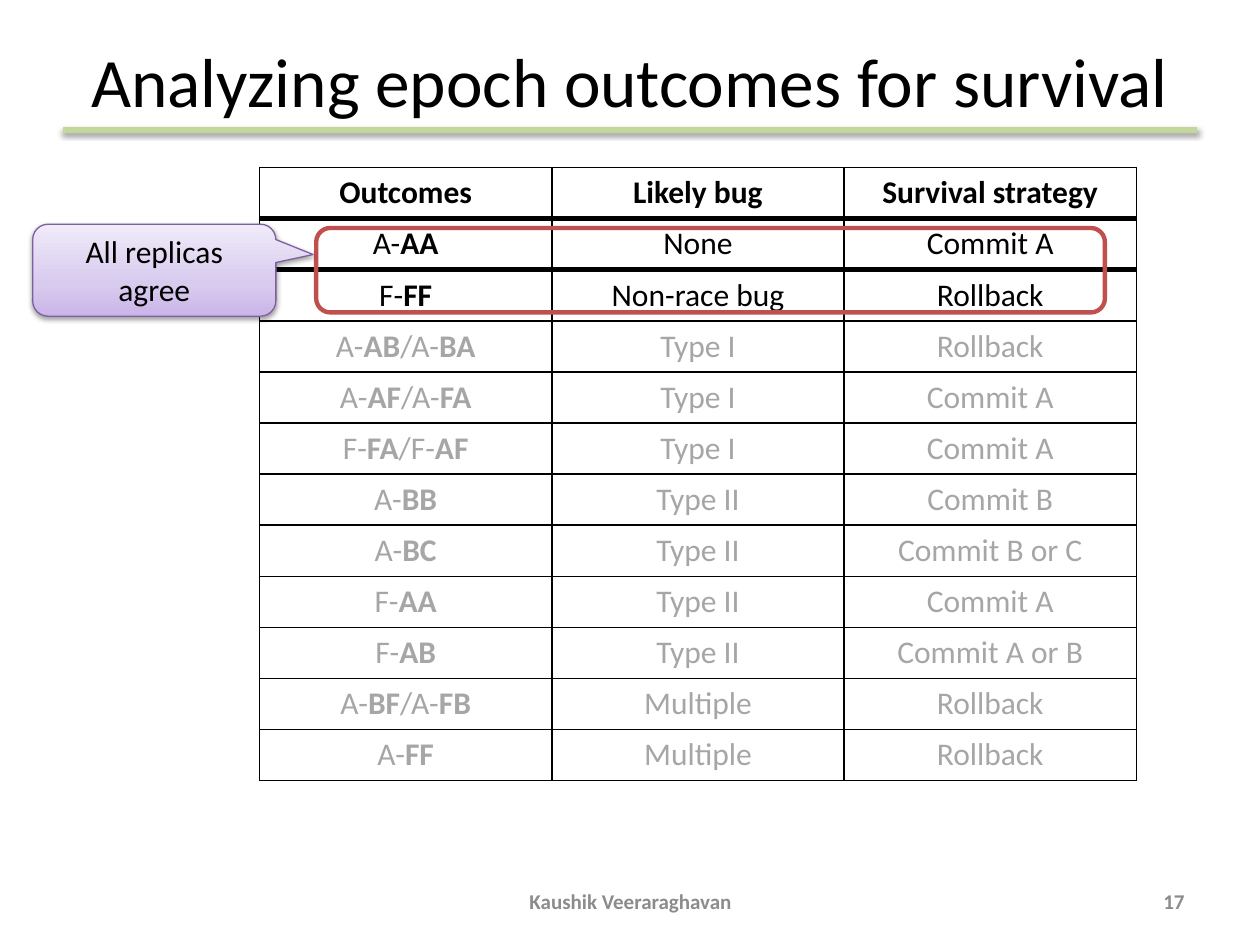
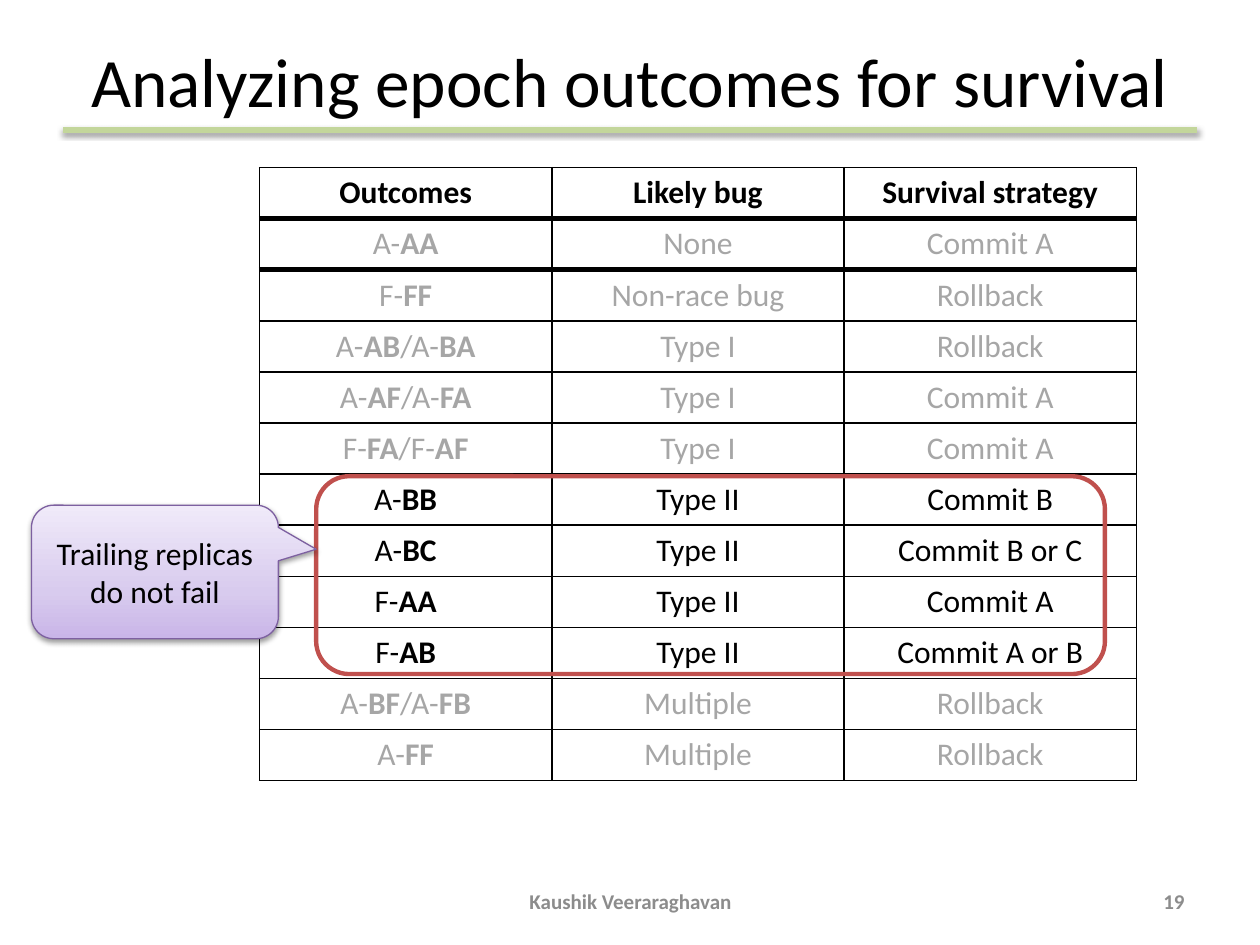
from lxml import etree
from pptx import Presentation
from pptx.dml.color import RGBColor
from pptx.enum.shapes import MSO_CONNECTOR as Link, MSO_SHAPE as Kind
from pptx.enum.text import MSO_ANCHOR as Anchor, PP_ALIGN as Align
from pptx.oxml.ns import qn
from pptx.util import Inches, Pt

FONT = "Calibri"
BLACK, GRAY, FAINT = "000000", "8C8C8C", "A6A6A6"
GREEN, RED, PURPLE = "C3D69B", "C0504D", "7D60A0"
LILAC = [(0, "C9B5E8"), (35, "D8CBEE"), (100, "F0EAF9")]
TITLE = "Analyzing epoch outcomes for survival"
AUTHOR = "Kaushik Veeraraghavan"
HEADS = ["Outcomes", "Likely bug", "Survival strategy"]
ROWS = [
    ("A-AA", "None", "Commit A"),
    ("F-FF", "Non-race bug", "Rollback"),
    ("A-AB/A-BA", "Type I", "Rollback"),
    ("A-AF/A-FA", "Type I", "Commit A"),
    ("F-FA/F-AF", "Type I", "Commit A"),
    ("A-BB", "Type II", "Commit B"),
    ("A-BC", "Type II", "Commit B or C"),
    ("F-AA", "Type II", "Commit A"),
    ("F-AB", "Type II", "Commit A or B"),
    ("A-BF/A-FB", "Multiple", "Rollback"),
    ("A-FF", "Multiple", "Rollback"),
]
THICK_EDGES = (1, 2)


def color(code):
    return RGBColor.from_string(code)


def box(*sizes):
    return [Inches(size) for size in sizes]


def node(parent, tag, **attrs):
    """Append an XML child with the given attributes."""
    child = etree.SubElement(parent, qn(tag))
    for key, val in attrs.items():
        child.set(key, str(val))
    return child


def tint(parent, code):
    return node(parent, "a:srgbClr", val=code)


def shade(shape):
    """Give a shape or connector a soft shadow below it."""
    props = shape._element.spPr
    glow = props.find(qn("a:effectLst"))
    if glow is None:
        glow = node(props, "a:effectLst")
    drop = node(glow, "a:outerShdw", blurRad=Pt(3.1), dist=Pt(1.6),
                dir=90 * 60000, rotWithShape=0)
    node(tint(drop, BLACK), "a:alpha", val=38000)


def split(code):
    """Yield (text, bold) runs; replica letters after a dash are bold."""
    for num, part in enumerate(code.split("/")):
        yield ("/" if num else "") + part[:2], False
        yield part[2:], True


class Deck:
    def __init__(self):
        self.prs = Presentation()
        self.prs.slide_width, self.prs.slide_height = box(10, 7.5)

    def start(self, number):
        """Add a slide with its title, rule and footer."""
        self.slide = self.prs.slides.add_slide(self.prs.slide_layouts[5])
        self.shapes = self.slide.shapes
        self.title()
        self.rule()
        self.label(AUTHOR, box(3.42, 6.95, 3.17, 0.4), Align.CENTER)
        self.label(str(number), box(7.17, 6.95, 2.33, 0.4), Align.RIGHT)

    def text(self, frame, runs, size, code=BLACK, align=Align.CENTER):
        para = frame.paragraphs[0]
        para.alignment = align
        font = para.font
        font.name, font.size, font.color.rgb = FONT, Pt(size), color(code)
        for words, bold in runs:
            run = para.add_run()
            run.text, run.font.bold = words, bold

    def title(self):
        shape = self.shapes.title
        shape.left, shape.top, shape.width, shape.height = box(0.5, 0.3, 9, 0.66)
        shape.text_frame.vertical_anchor = Anchor.MIDDLE
        self.text(shape.text_frame, [(TITLE, False)], 39.6)

    def rule(self):
        line = self.shapes.add_connector(Link.STRAIGHT, *box(0.5, 1.03, 9.5, 1.03))
        line.line.color.rgb, line.line.width = color(GREEN), Pt(3.5)
        shade(line)

    def label(self, words, place, align):
        frame = self.shapes.add_textbox(*place).text_frame
        frame.word_wrap, frame.vertical_anchor = True, Anchor.MIDDLE
        self.text(frame, [(words, True)], 12, GRAY, align)

    def shape(self, kind, place, code, width):
        shape = self.shapes.add_shape(kind, *place)
        shape.shadow.inherit = False
        shape.fill.background()
        shape.line.color.rgb, shape.line.width = color(code), Pt(width)
        return shape

    def frame(self, place):
        self.shape(Kind.ROUNDED_RECTANGLE, place, RED, 2.5)

    def callout(self, words, place):
        shape = self.shape(Kind.ROUNDED_RECTANGULAR_CALLOUT, place, PURPLE, 0.75)
        for num, val in enumerate((0.653, -0.17, 0.167)):
            shape.adjustments[num] = val
        shape.fill.gradient()
        shape.fill.gradient_angle = 90
        stops = shape._element.spPr.find(qn("a:gradFill")).find(qn("a:gsLst"))
        for stop in list(stops):
            stops.remove(stop)
        for pos, code in LILAC:
            tint(node(stops, "a:gs", pos=pos * 1000), code)
        shade(shape)
        shape.text_frame.word_wrap = True
        shape.text_frame.vertical_anchor = Anchor.MIDDLE
        self.text(shape.text_frame, [(words, False)], 18)

    def border(self, cell, row):
        props = cell._tc.get_or_add_tcPr()
        for side, edge in (("L", None), ("R", None), ("T", row), ("B", row + 1)):
            width = Pt(3 if edge in THICK_EDGES else 1)
            line = node(props, f"a:ln{side}", w=width)
            tint(node(line, "a:solidFill"), BLACK)

    def table(self, active):
        """Draw the outcome table; only the active rows are black."""
        table = self.shapes.add_table(len(ROWS) + 1, len(HEADS),
                                      *box(2.06, 1.33, 6.96, 4.87)).table
        table.first_row = table.horz_banding = False
        for row, texts in enumerate([HEADS, *ROWS]):
            code = BLACK if row == 0 or row in active else FAINT
            for col, words in enumerate(texts):
                cell = table.cell(row, col)
                runs = split(words) if row and col == 0 else [(words, row == 0)]
                self.border(cell, row)
                cell.fill.background()
                self.text(cell.text_frame, runs, 18, code)


def main():
    deck = Deck()
    cases = [
        (17, range(1, 3), (1.81, 0.67),
         "All replicas agree", (0.26, 1.78, 1.93, 0.73)),
        (19, range(6, 10), (3.78, 1.57),
         "Trailing replicas do not fail", (0.25, 4.01, 1.96, 1.06)),
    ]
    for number, active, (top, height), words, place in cases:
        deck.start(number)
        deck.table(active)
        deck.frame(box(2.51, top, 6.26, height))
        deck.callout(words, box(*place))
    deck.prs.save("out.pptx")


if __name__ == "__main__":
    main()
